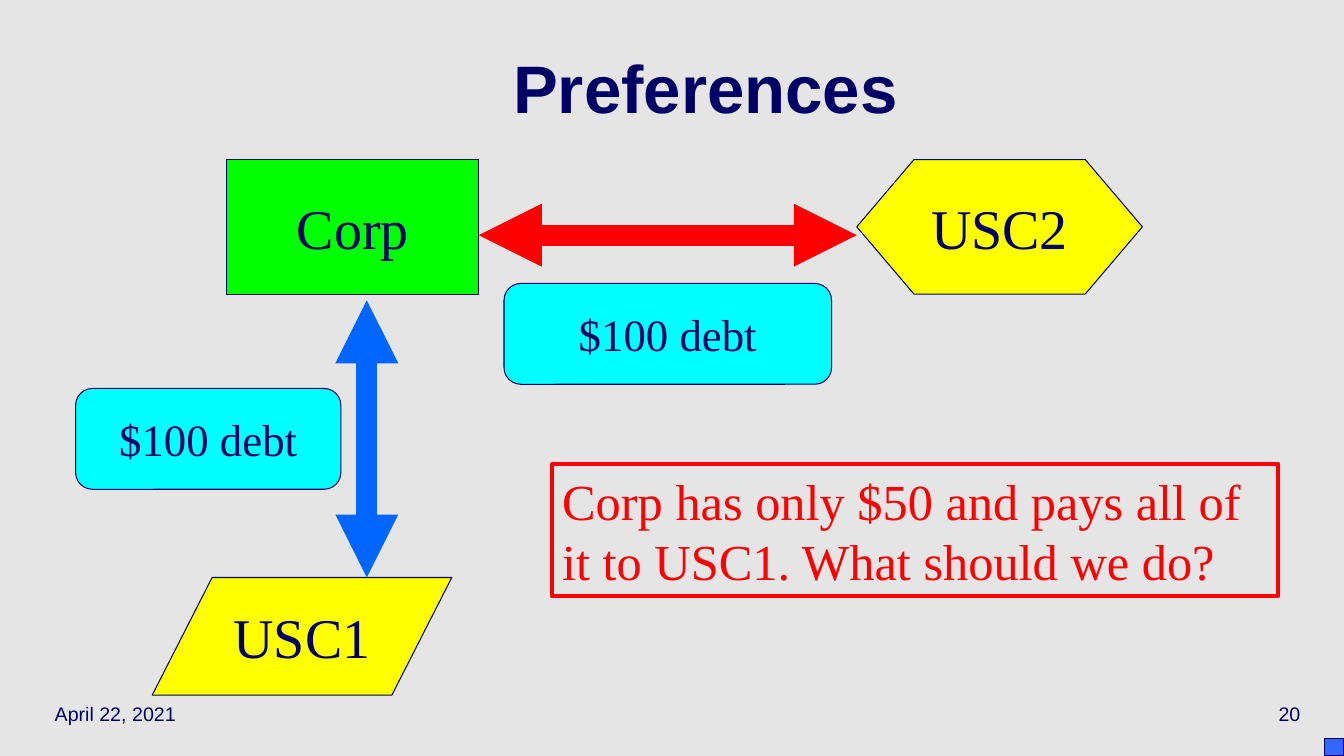
from lxml import etree
from pptx import Presentation
from pptx.dml.color import RGBColor
from pptx.enum import shapes, text
from pptx.oxml.ns import qn
from pptx.util import Pt

NAVY = RGBColor(0x00, 0x00, 0x66)
YELLOW = RGBColor(0xFF, 0xFF, 0x00)
GREEN = RGBColor(0x00, 0xFF, 0x00)
CYAN = RGBColor(0x00, 0xFF, 0xFF)
RED = RGBColor(0xFF, 0x00, 0x00)
BLUE = RGBColor(0x00, 0x66, 0xFF)
CORNER_BLUE = RGBColor(0x33, 0x66, 0xFF)
BACKGROUND = RGBColor(0xE5, 0xE5, 0xE5)
SERIF, SANS = "Times New Roman", "Arial"
KIND = shapes.MSO_SHAPE
ALIGN = text.PP_ALIGN


def write(shape, words, alignment, wrap, color=NAVY, **font_format):
    """Fill a shape with one vertically centred paragraph."""
    frame = shape.text_frame
    frame.word_wrap = wrap
    frame.vertical_anchor = text.MSO_ANCHOR.MIDDLE
    paragraph = frame.paragraphs[0]
    paragraph.alignment = alignment
    run = paragraph.add_run()
    run.text = words
    run.font.color.rgb = color
    for name, value in font_format.items():
        setattr(run.font, name, value)


def add_box(kind, bounds, fill, line=NAVY, line_width=0.75):
    shape = slide.shapes.add_shape(kind, *map(Pt, bounds))
    shape.shadow.inherit = False
    if fill is None:
        shape.fill.background()
    else:
        shape.fill.solid()
        shape.fill.fore_color.rgb = fill
    shape.line.color.rgb = line
    shape.line.width = Pt(line_width)
    return shape


presentation = Presentation()
presentation.slide_width, presentation.slide_height = Pt(960), Pt(540)
slide = presentation.slides.add_slide(presentation.slide_layouts[5])
slide.background.fill.solid()
slide.background.fill.fore_color.rgb = BACKGROUND

# Title and footer
title = slide.shapes.title
title.left, title.top, title.width, title.height = map(Pt, (64, 24, 880, 90))
write(title, "Preferences", ALIGN.CENTER, True, name=SANS, size=Pt(48), bold=True)
title.text_frame.paragraphs[0].line_spacing = 0.7

for left, words, alignment in [
    (32, "April 22, 2021", ALIGN.LEFT),
    (736, "20", ALIGN.RIGHT),
]:
    footer = slide.shapes.add_textbox(Pt(left), Pt(492), Pt(200), Pt(36))
    # The box keeps its width, so the text aligns to its edges
    write(footer, words, alignment, True, name=SANS, size=Pt(14))

# Parties
for kind, bounds, fill, words in [
    (KIND.FLOWCHART_DATA, (108.75, 412.5, 214, 84), YELLOW, "USC1"),
    (KIND.FLOWCHART_PROCESS, (162, 114, 180, 96), GREEN, "Corp"),
    (KIND.FLOWCHART_PREPARATION, (612, 114, 204, 96), YELLOW, "USC2"),
]:
    party = add_box(kind, bounds, fill)
    write(party, words, ALIGN.CENTER, False, name=SERIF, size=Pt(40))

# Double-headed arrows between the parties
for ends, color in [
    ((342, 168, 612, 168), RED),
    ((262, 214.5, 262, 412.5), BLUE),
]:
    arrow = slide.shapes.add_connector(shapes.MSO_CONNECTOR.STRAIGHT, *map(Pt, ends))
    arrow.line.color.rgb = color
    arrow.line.width = Pt(15)
    line = arrow.line._get_or_add_ln()
    for end in ("a:headEnd", "a:tailEnd"):
        etree.SubElement(line, qn(end), type="triangle")
    etree.SubElement(arrow._element.spPr, qn("a:effectLst"))

# Debts
for bounds in [(54, 277.5, 189.5, 72), (360, 202.5, 234, 72)]:
    debt = add_box(KIND.FLOWCHART_ALTERNATE_PROCESS, bounds, CYAN)
    write(debt, "$100 debt", ALIGN.CENTER, False, name=SERIF, size=Pt(32))

add_box(KIND.RECTANGLE, (946, 527.5, 14, 12.5), CORNER_BLUE)

question = add_box(KIND.RECTANGLE, (394.5, 331.5, 518.5, 94.5), None, RED, 3)
write(question, "Corp has only $50 and pays all of it to USC1. What should we do?",
      ALIGN.LEFT, True, RED, name=SERIF, size=Pt(36))

presentation.save("out.pptx")
